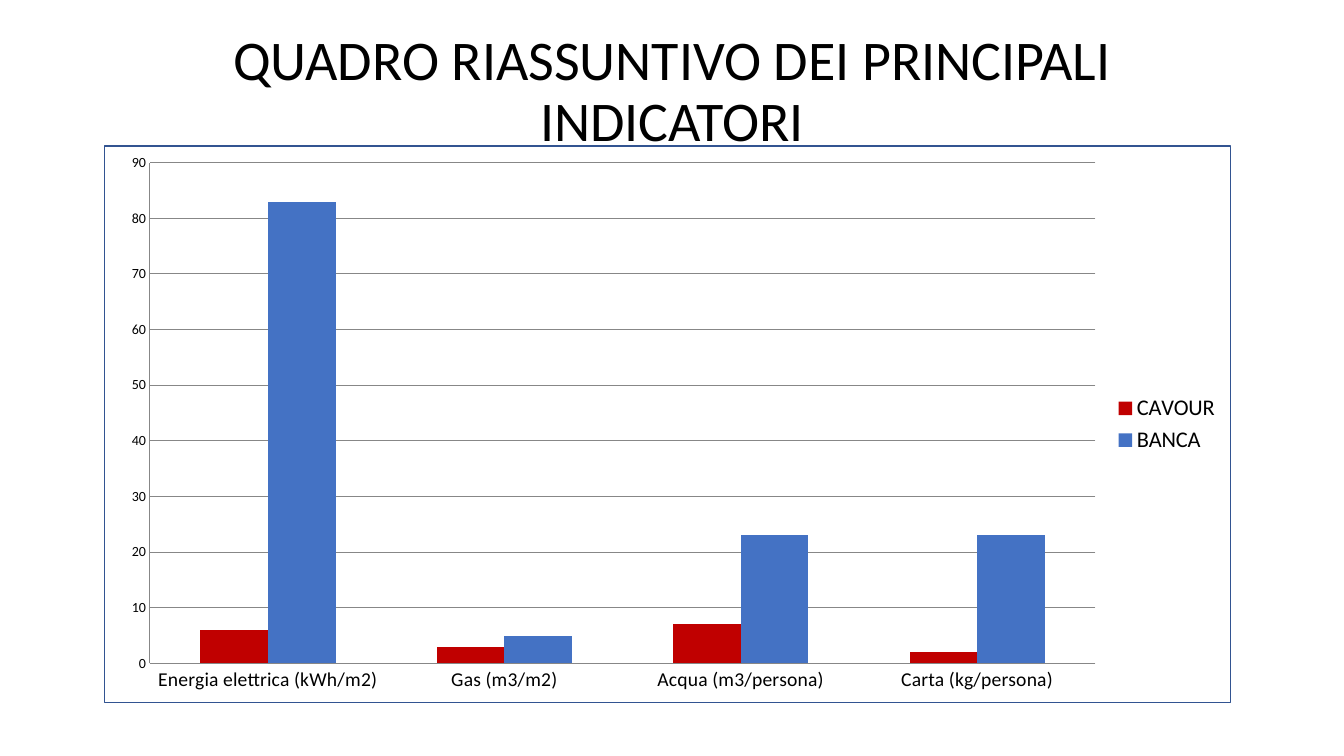
from lxml import etree
from pptx import Presentation
from pptx.chart.data import CategoryChartData
from pptx.dml.color import RGBColor
from pptx.enum import chart as ch, shapes, text
from pptx.oxml import ns
from pptx.util import Cm, Pt

BOX = (2.64, 3.68, 28.37, 14.02)
CATS = ["Energia elettrica (kWh/m2)", "Gas (m3/m2)",
        "Acqua (m3/persona)", "Carta (kg/persona)"]
SERIES = [("CAVOUR", [6, 3, 7, 2], "C00000"),
          ("BANCA", [83, 5, 23, 23], "4472C4")]
PLOT = {"x": 0.04, "y": 0.03, "w": 0.84, "h": 0.9}


def color(hexa):
    return RGBColor.from_string(hexa)


class Deck:
    face = "Calibri"
    ink = "000000"
    grid = "878787"
    edge = "325491"

    def __init__(self, wide, high):
        self.prs = Presentation()
        self.prs.slide_width = Cm(wide)
        self.prs.slide_height = Cm(high)
        self.slide = self.prs.slides.add_slide(self.prs.slide_layouts[5])

    def font(self, font, size):
        font.name = self.face
        font.size = Pt(size)
        font.color.rgb = color(self.ink)

    def title(self, words, box, size):
        head = self.slide.shapes.title
        head.left, head.top, head.width, head.height = map(Cm, box)
        frame = head.text_frame
        frame.word_wrap = True
        frame.auto_size = text.MSO_AUTO_SIZE.NONE
        frame.vertical_anchor = text.MSO_ANCHOR.MIDDLE
        para = frame.paragraphs[0]
        para.alignment = text.PP_ALIGN.CENTER
        para.line_spacing = 0.9
        run = para.add_run()
        run.text = words
        self.font(run.font, size)

    def frame(self, box):
        rect = self.slide.shapes.add_shape(
            shapes.MSO_SHAPE.RECTANGLE, *map(Cm, box))
        rect.shadow.inherit = False
        rect.fill.background()
        rect.line.color.rgb = color(self.edge)
        rect.line.width = Pt(1)

    def bars(self, cats, series, box):
        data = CategoryChartData(number_format="0")
        data.categories = cats
        for name, vals, _ in series:
            data.add_series(name, vals)
        chart = self.slide.shapes.add_chart(
            ch.XL_CHART_TYPE.COLUMN_CLUSTERED, *map(Cm, box), data).chart
        chart.has_title = False
        self.font(chart.font, 10)
        plot = chart.plots[0]
        plot.vary_by_categories = False
        plot.gap_width = 150
        plot.overlap = 0
        for bar, (_, _, hexa) in zip(plot.series, series):
            bar.format.fill.solid()
            bar.format.fill.fore_color.rgb = color(hexa)
        for axis, size in ((chart.category_axis, 14), (chart.value_axis, 10)):
            axis.major_tick_mark = ch.XL_TICK_MARK.NONE
            axis.minor_tick_mark = ch.XL_TICK_MARK.NONE
            axis.format.line.color.rgb = color(self.grid)
            self.font(axis.tick_labels.font, size)
        value = chart.value_axis
        value.minimum_scale, value.maximum_scale = 0, 90
        value.major_unit = 10
        value.has_major_gridlines = True
        value.major_gridlines.format.line.color.rgb = color(self.grid)
        value.tick_labels.number_format = "0"
        value.tick_labels.number_format_is_linked = False
        chart.has_legend = True
        chart.legend.position = ch.XL_LEGEND_POSITION.RIGHT
        chart.legend.include_in_layout = False
        self.font(chart.legend.font, 16)
        self.place(chart)

    def place(self, chart):
        """Fix the inner plot area as fractions of the chart."""
        area = chart.element.find(".//" + ns.qn("c:plotArea"))
        for old in area.findall(ns.qn("c:layout")):
            area.remove(old)
        layout = etree.Element(ns.qn("c:layout"))
        area.insert(0, layout)
        manual = etree.SubElement(layout, ns.qn("c:manualLayout"))
        rules = {"layoutTarget": "inner", "xMode": "edge", "yMode": "edge"}
        for tag, val in {**rules, **PLOT}.items():
            etree.SubElement(manual, ns.qn("c:" + tag)).set("val", str(val))


def main():
    deck = Deck(33.87, 19.05)
    deck.title("QUADRO RIASSUNTIVO DEI PRINCIPALI INDICATORI",
               (2.33, 1.01, 29.21, 2.67), 40)
    deck.frame(BOX)
    deck.bars(CATS, SERIES, BOX)
    deck.prs.save("out.pptx")


if __name__ == "__main__":
    main()
